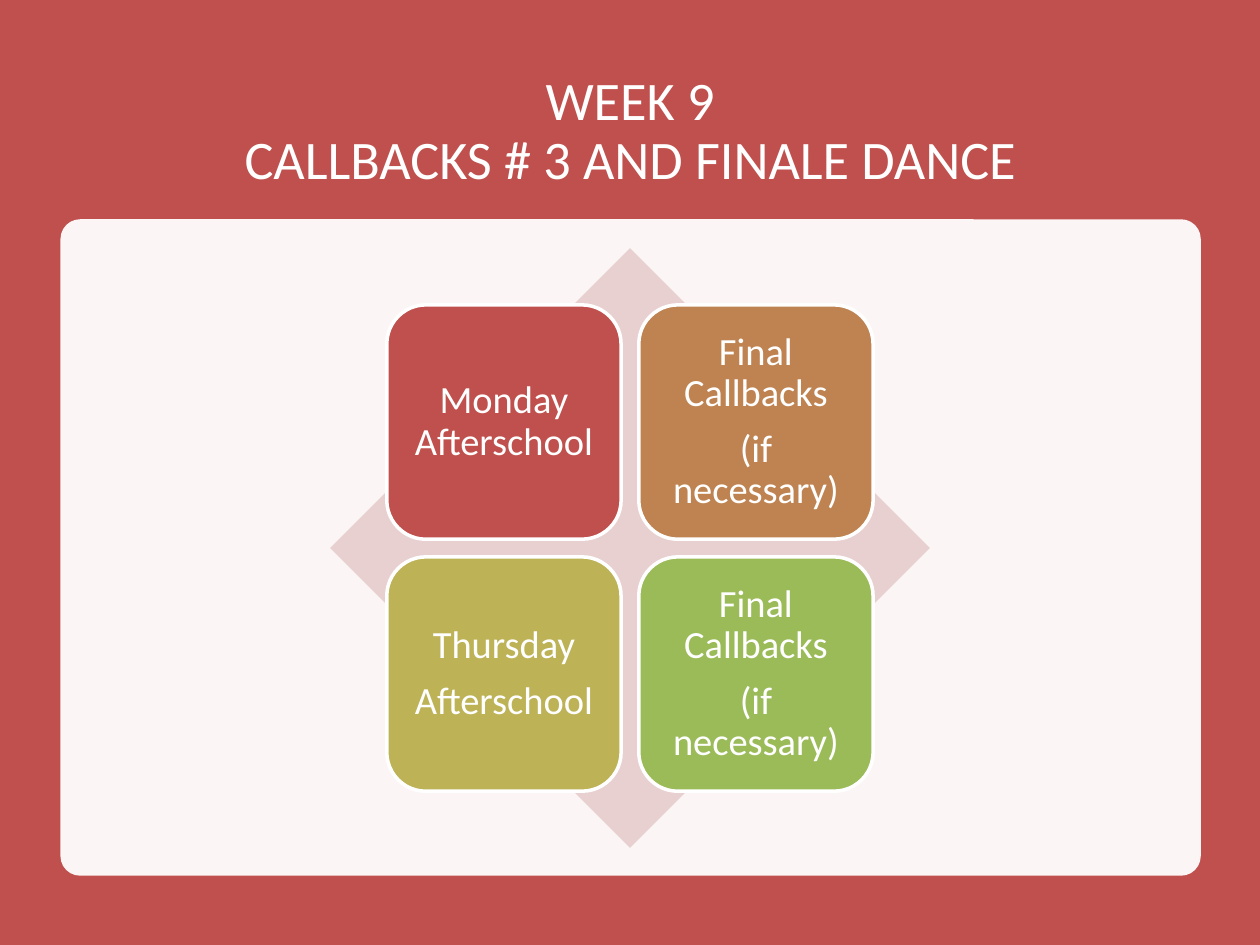
from dataclasses import dataclass

from lxml import etree
from pptx import Presentation
from pptx.dml.color import RGBColor
from pptx.enum.shapes import MSO_SHAPE as Preset
from pptx.enum.text import MSO_ANCHOR as Anchor, MSO_AUTO_SIZE as AutoSize, PP_ALIGN as Align
from pptx.oxml.ns import qn
from pptx.util import Inches, Pt


@dataclass(frozen=True)
class Theme:
    font: str = "Calibri"
    white: str = "FFFFFF"
    red: str = "C0504D"
    pink: str = "E8D0D0"
    orange: str = "BE8351"
    olive: str = "BDB255"
    green: str = "9BBB59"
    title_size: int = 31
    tile_size: int = 22


THEME = Theme()
SLIDE_W, SLIDE_H = 10, 7.5
CENTER_X, CENTER_Y = 5, 4.35
DIAMOND_SIZE, TILE_SIZE, TILE_PITCH = 4.76, 1.86, 2

# Tiles row by row: fill and paragraphs
TILES = [
    (THEME.red, ["Monday Afterschool"]),
    (THEME.orange, ["Final Callbacks", "(if necessary)"]),
    (THEME.olive, ["Thursday", "Afterschool"]),
    (THEME.green, ["Final Callbacks", "(if necessary)"]),
]


def add_block(shapes, preset, box, fill):
    block = shapes.add_shape(preset, *map(Inches, box))
    block.shadow.inherit = False
    block.fill.solid()
    block.fill.fore_color.rgb = RGBColor.from_string(fill)
    block.line.fill.background()
    return block


def set_alpha(block, percent):
    color = block.element.spPr.find(qn("a:solidFill"))[0]
    etree.SubElement(color, qn("a:alpha")).set("val", str(percent * 1000))


def add_run(paragraph, text, size):
    run = paragraph.add_run()
    run.text = text
    run.font.name = THEME.font
    run.font.size = Pt(size)
    run.font.color.rgb = RGBColor.from_string(THEME.white)


def format_paragraph(paragraph):
    paragraph.alignment = Align.CENTER
    paragraph.line_spacing = 0.9


def place_title(slide, lines):
    title = slide.shapes.title
    title.left, title.top, title.width, title.height = map(Inches, (0.69, 0.5, 8.62, 1.1))
    frame = title.text_frame
    frame.auto_size = AutoSize.NONE
    frame.vertical_anchor = Anchor.MIDDLE
    paragraph = frame.paragraphs[0]
    format_paragraph(paragraph)
    for index, line in enumerate(lines):
        if index:
            paragraph.add_line_break()
        add_run(paragraph, line, THEME.title_size)
    # Bring the title in front of the backdrop
    slide.shapes.element.append(title.element)


def add_tile(shapes, row, column, fill, lines):
    left = CENTER_X + (column - 0.5) * TILE_PITCH - TILE_SIZE / 2
    top = CENTER_Y + (row - 0.5) * TILE_PITCH - TILE_SIZE / 2
    tile = add_block(shapes, Preset.ROUNDED_RECTANGLE, (left, top, TILE_SIZE, TILE_SIZE), fill)
    tile.line.color.rgb = RGBColor.from_string(THEME.white)
    tile.line.width = Pt(2)
    frame = tile.text_frame
    frame.word_wrap = True
    frame.vertical_anchor = Anchor.MIDDLE
    frame.margin_left = frame.margin_right = Inches(0.09)
    frame.margin_top = frame.margin_bottom = Inches(0.09)
    for index, line in enumerate(lines):
        paragraph = frame.add_paragraph() if index else frame.paragraphs[0]
        format_paragraph(paragraph)
        paragraph.space_after = Pt(8)
        add_run(paragraph, line, THEME.tile_size)


def add_matrix(slide):
    matrix = slide.shapes.add_group_shape()
    half = DIAMOND_SIZE / 2
    diamond_box = (CENTER_X - half, CENTER_Y - half, DIAMOND_SIZE, DIAMOND_SIZE)
    add_block(matrix.shapes, Preset.DIAMOND, diamond_box, THEME.pink)
    for index, (fill, lines) in enumerate(TILES):
        row, column = divmod(index, 2)
        add_tile(matrix.shapes, row, column, fill, lines)


def main():
    prs = Presentation()
    prs.slide_width, prs.slide_height = Inches(SLIDE_W), Inches(SLIDE_H)
    slide = prs.slides.add_slide(prs.slide_layouts[5])

    # Backdrop and title
    add_block(slide.shapes, Preset.RECTANGLE, (0, 0, SLIDE_W, SLIDE_H), THEME.red)
    place_title(slide, ["WEEK 9", "CALLBACKS # 3 AND FINALE DANCE"])

    # Content panel
    panel = add_block(slide.shapes, Preset.ROUNDED_RECTANGLE, (0.48, 1.74, 9.05, 5.21), THEME.white)
    panel.adjustments[0] = 0.03
    set_alpha(panel, 95)

    # Diamond with four tiles
    add_matrix(slide)
    prs.save("out.pptx")


if __name__ == "__main__":
    main()
